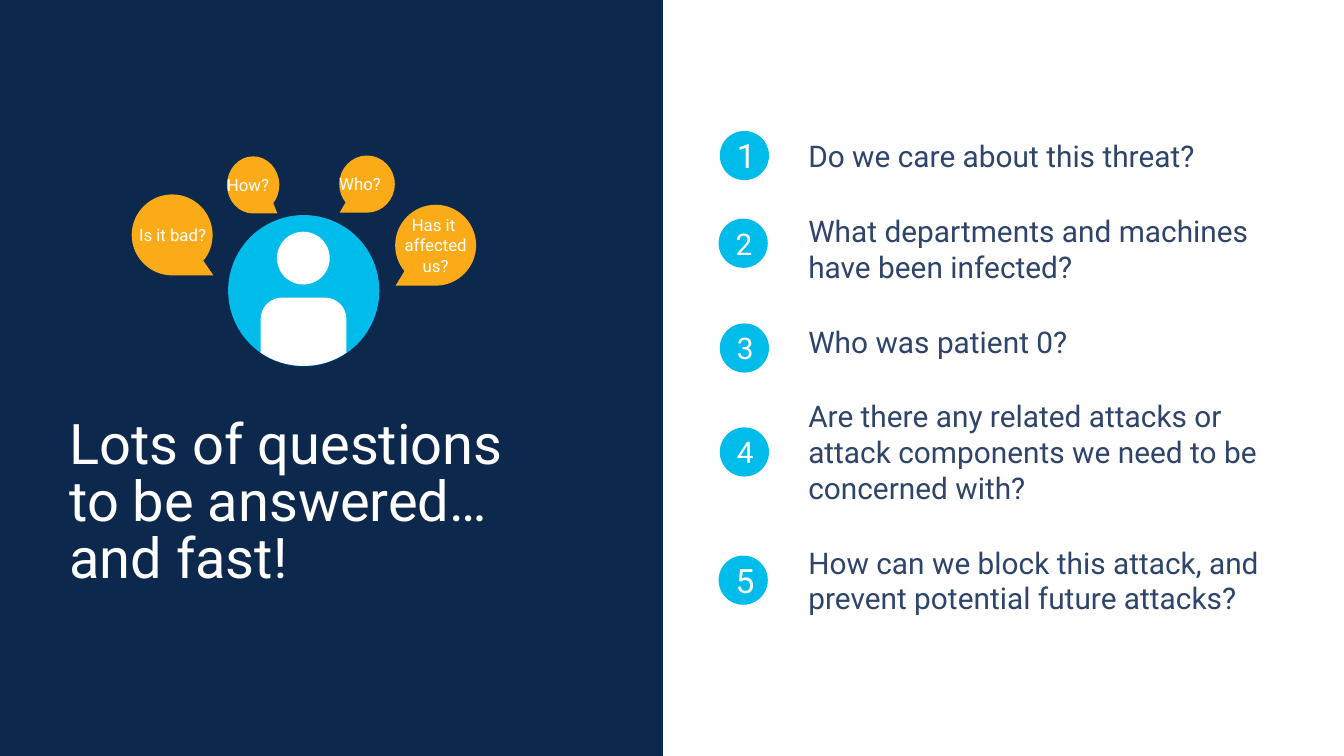
"""Build a slide listing the questions a security team must answer fast."""
from lxml import etree
from pptx import Presentation
from pptx.dml.color import RGBColor
from pptx.enum.shapes import MSO_SHAPE as SHAPE
from pptx.enum.text import MSO_ANCHOR as ANCHOR, PP_ALIGN as ALIGN
from pptx.oxml.ns import qn
from pptx.util import Cm, Pt

NAVY, CYAN, ORANGE, WHITE, INK = "0D284D", "00BCEB", "FBAB18", "FFFFFF", "2F446B"


def paint(sp, color):
    sp.shadow.inherit = False
    sp.fill.solid()
    sp.fill.fore_color.rgb = RGBColor.from_string(color)
    sp.line.fill.background()


def write(p, text, size, color):
    for i, line in enumerate(text.split("\n")):
        if i:
            p.add_line_break()
        r = p.add_run()
        r.text = line
        r.font.name = "Roboto"
        r.font.size = Pt(size)
        r.font.color.rgb = RGBColor.from_string(color)


prs = Presentation()
prs.slide_width, prs.slide_height = Cm(33.87), Cm(19.05)
s = prs.slides.add_slide(prs.slide_layouts[6])

panel = s.shapes.add_shape(SHAPE.RECTANGLE, 0, 0, Cm(16.71), prs.slide_height)
paint(panel, NAVY)

numbers = [(18.14, 3.3, 24), (18.11, 5.51, 21.33), (18.14, 8.15, 21.33),
           (18.14, 10.77, 21.33), (18.11, 14, 24)]
for n, (x, y, size) in enumerate(numbers, 1):
    sp = s.shapes.add_shape(SHAPE.OVAL, Cm(x), Cm(y), Cm(1.24), Cm(1.24))
    paint(sp, CYAN)
    tf = sp.text_frame
    tf.vertical_anchor = ANCHOR.MIDDLE
    tf.paragraphs[0].alignment = ALIGN.CENTER
    write(tf.paragraphs[0], str(n), size, WHITE)

title = s.shapes.add_textbox(Cm(1.5), Cm(9.32), Cm(14.27), Cm(6.78))
tf = title.text_frame
tf.word_wrap = True
tf.vertical_anchor = ANCHOR.MIDDLE
tf.paragraphs[0].line_spacing = 0.85
write(tf.paragraphs[0], "Lots of questions\nto be answered…\nand fast!", 40, WHITE)

questions = [
    "Do we care about this threat?",
    "What departments and machines have been infected?",
    "Who was patient 0?",
    "Are there any related attacks or attack components we need to be concerned with?",
    "How can we block this attack, and prevent potential future attacks?",
]
body = s.shapes.add_textbox(Cm(20.17), Cm(1.98), Cm(12.78), Cm(15.04))
tf = body.text_frame
tf.word_wrap = True
tf.margin_left = tf.margin_right = 0
tf.vertical_anchor = ANCHOR.MIDDLE
for i, question in enumerate(questions):
    p = tf.add_paragraph() if i else tf.paragraphs[0]
    pPr = p._p.get_or_add_pPr()
    pPr.set("marL", str(Cm(0.2)))
    pPr.set("indent", "0")
    if i:
        p.space_before = Pt(27.7)
    write(p, question, 21.33, INK)

for x, y, d, color in [(5.75, 5.42, 3.81, CYAN), (6.98, 5.84, 1.33, WHITE)]:
    sp = s.shapes.add_shape(SHAPE.OVAL, Cm(x), Cm(y), Cm(d), Cm(d))
    paint(sp, color)

torso = [[(7.11, 7.5)], [(8.19, 7.5)], [(8.49, 7.5), (8.73, 7.74), (8.73, 8.04)],
         [(8.73, 8.89)], [(8.42, 9.1), (8.05, 9.22), (7.65, 9.22)],
         [(7.25, 9.22), (6.88, 9.1), (6.57, 8.89)], [(6.57, 8.04)],
         [(6.57, 7.74), (6.81, 7.5), (7.11, 7.5)]]
outlines = [(torso, WHITE, "", None)]

unit_bubble = [[(0, -1)], [(0.55, -1), (1, -0.55), (1, 0)],
               [(1, 0.24), (0.92, 0.46), (0.77, 0.64)], [(1, 1)], [(0, 1)],
               [(-0.55, 1), (-1, 0.55), (-1, 0)], [(-1, -0.55), (-0.55, -1), (0, -1)]]
bubbles = [("Who?", 9.25, 4.64, 0.7, 0.72, 8.56, ALIGN.LEFT),
           ("Has it \naffected\nus?", 10.98, 6.18, 1.02, 1.02, 9.97, ALIGN.CENTER),
           ("How?", 6.38, 4.66, 0.66, 0.72, 6.99, ALIGN.LEFT),
           ("Is it bad?", 4.34, 5.92, 1.02, 1.02, 5.38, ALIGN.CENTER)]
for text, cx, cy, rx, ry, tip, align in bubbles:
    side = 1 if tip > cx else -1
    outline = [[(tip if (x, y) == (1, 1) else cx + side * rx * x, cy + ry * y)
                for x, y in segment] for segment in unit_bubble]
    outlines.append((outline, ORANGE, text, align))

for outline, color, text, align in outlines:
    points = [(Cm(x), Cm(y)) for segment in outline for x, y in segment]
    builder = s.shapes.build_freeform(*points[0])
    builder.add_line_segments(points[1:], close=True)
    sp = builder.convert_to_shape()
    lines = iter(list(sp._element.iter(qn("a:lnTo"))))
    for segment in outline[1:]:
        steps = [next(lines) for point in segment]
        if len(steps) == 3:
            curve = etree.Element(qn("a:cubicBezTo"))
            steps[0].addprevious(curve)
            for step in steps:
                curve.append(step[0])
                step.getparent().remove(step)
    paint(sp, color)
    if text:
        tf = sp.text_frame
        tf.margin_left = tf.margin_right = tf.margin_top = tf.margin_bottom = 0
        tf.word_wrap = False
        tf.vertical_anchor = ANCHOR.MIDDLE
        tf.paragraphs[0].alignment = align
        write(tf.paragraphs[0], text, 12, WHITE)

prs.save("out.pptx")
